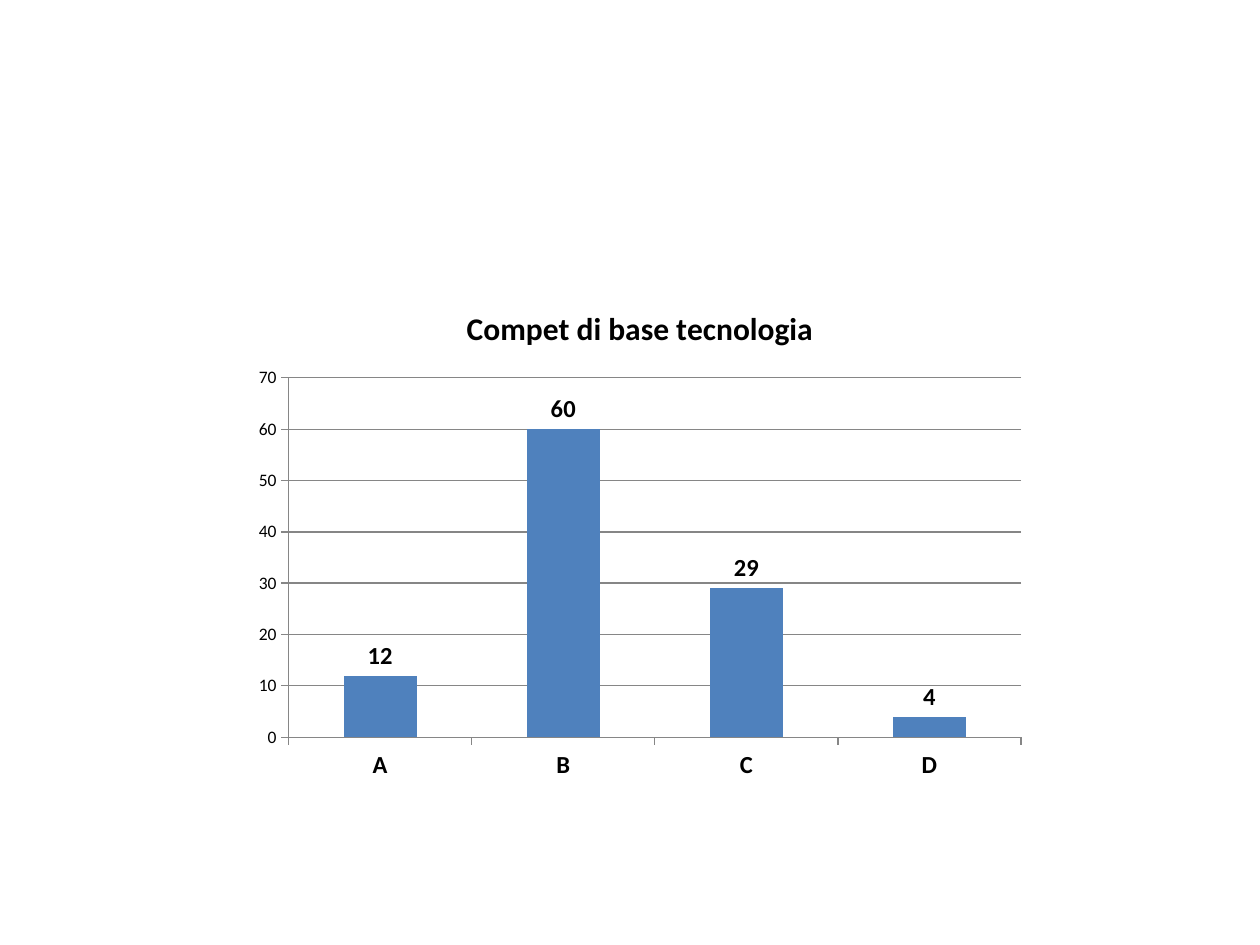
"""Build a slide with a column chart of basic technology competences."""
from pptx import Presentation
from pptx.chart.data import CategoryChartData
from pptx.dml.color import RGBColor
from pptx.enum.chart import XL_CHART_TYPE, XL_LABEL_POSITION, XL_TICK_MARK
from pptx.util import Pt

PX = 914400 / 126
COLORS = {"bar": "4F81BD", "line": "868686", "text": "000000"}
TITLE = "Compet di base tecnologia"


def px(n):
    return round(n * PX)


def set_font(font, size, bold):
    font.name = "Calibri"
    font.size = Pt(size)
    font.bold = bold
    font.color.rgb = RGBColor.from_string(COLORS["text"])


prs = Presentation()
prs.slide_width, prs.slide_height = px(1260), px(945)
s = prs.slides.add_slide(prs.slide_layouts[6])

data = CategoryChartData()
data.categories = ["A", "B", "C", "D"]
data.add_series(TITLE, [12, 60, 29, 4])
chart = s.shapes.add_chart(XL_CHART_TYPE.COLUMN_CLUSTERED,
                           px(243), px(284), px(794), px(506), data).chart
set_font(chart.font, 10, False)
chart.has_legend = False

chart.has_title = True
p = chart.chart_title.text_frame.paragraphs[0]
p.text = TITLE
set_font(p.font, 18, True)
chart.chart_title.include_in_layout = False

cat, val = chart.category_axis, chart.value_axis
set_font(cat.tick_labels.font, 14, True)
set_font(val.tick_labels.font, 10, False)
val.minimum_scale, val.maximum_scale, val.major_unit = 0, 70, 10
val.has_major_gridlines = True
for axis in (cat, val):
    axis.major_tick_mark = XL_TICK_MARK.OUTSIDE
    axis.minor_tick_mark = XL_TICK_MARK.NONE
for line in (cat.format.line, val.format.line, val.major_gridlines.format.line):
    line.color.rgb = RGBColor.from_string(COLORS["line"])
    line.width = Pt(0.75)

plot = chart.plots[0]
plot.gap_width = 150
plot.vary_by_categories = False
bars = plot.series[0]
bars.format.fill.solid()
bars.format.fill.fore_color.rgb = RGBColor.from_string(COLORS["bar"])
labels = bars.data_labels
labels.show_value = True
labels.position = XL_LABEL_POSITION.OUTSIDE_END
set_font(labels.font, 14, True)

prs.save("out.pptx")
